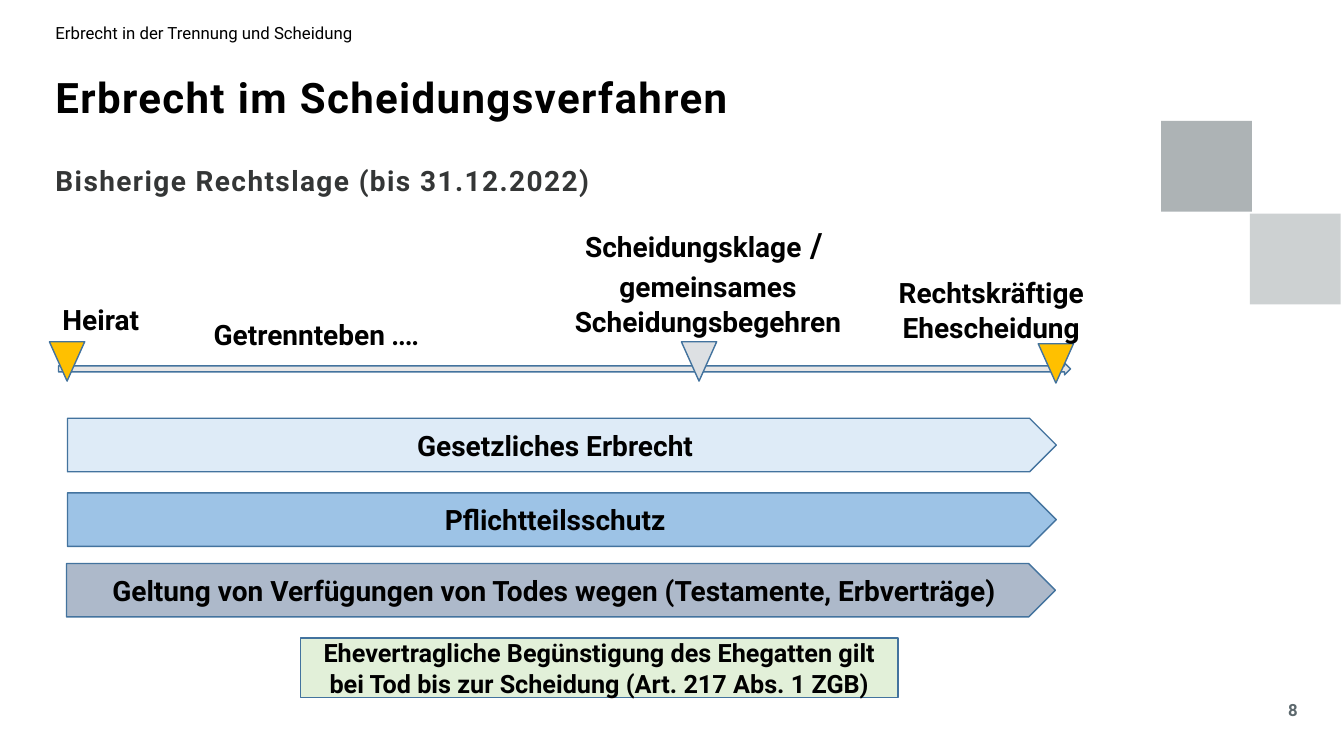
from dataclasses import dataclass

from lxml import etree
from pptx import Presentation
from pptx.dml.color import RGBColor
from pptx.enum.shapes import MSO_SHAPE
from pptx.enum.text import MSO_ANCHOR, MSO_AUTO_SIZE, PP_ALIGN
from pptx.oxml.ns import qn
from pptx.shapes.autoshape import Shape
from pptx.slide import Slide
from pptx.text.text import TextFrame
from pptx.util import Pt

RECTANGLE = MSO_SHAPE.RECTANGLE
TRIANGLE = MSO_SHAPE.ISOSCELES_TRIANGLE
PENTAGON = MSO_SHAPE.PENTAGON
RIGHT_ARROW = MSO_SHAPE.RIGHT_ARROW
LEFT, CENTER = PP_ALIGN.LEFT, PP_ALIGN.CENTER
TOP, MIDDLE = MSO_ANCHOR.TOP, MSO_ANCHOR.MIDDLE

BLACK = RGBColor(0x00, 0x00, 0x00)
CHARCOAL = RGBColor(0x34, 0x36, 0x36)
SLATE = RGBColor(0x5C, 0x68, 0x6D)
OUTLINE = RGBColor(0x43, 0x73, 0x9E)
AXIS_GREY = RGBColor(0xE7, 0xE6, 0xE6)
MARKER_GREY = RGBColor(0xDD, 0xE0, 0xE3)
AMBER = RGBColor(0xFF, 0xC0, 0x00)
PALE_BLUE = RGBColor(0xDE, 0xEB, 0xF7)
MID_BLUE = RGBColor(0x9D, 0xC3, 0xE6)
GREY_BLUE = RGBColor(0xAD, 0xB9, 0xCA)
PALE_GREEN = RGBColor(0xE2, 0xF0, 0xD9)

FONT = "Roboto"
MARGIN = 39.6


@dataclass(frozen=True)
class Box:
    left: float
    top: float
    width: float
    height: float


@dataclass(frozen=True)
class Piece:
    text: str
    size: float | None = None
    font: str | None = None


@dataclass(frozen=True)
class Style:
    size: float = 20
    color: RGBColor = BLACK
    bold: bool = True
    align: PP_ALIGN = CENTER
    line_spacing: float | Pt | None = None
    tracking: int = 0


@dataclass(frozen=True)
class Label:
    box: Box
    paragraphs: list[list[Piece]]
    style: Style = Style()
    inset: tuple[float, float, float, float] = (0, 0, 0, 0)


@dataclass(frozen=True)
class Figure:
    kind: MSO_SHAPE
    box: Box
    fill: RGBColor
    text: str = ""
    size: float = 20
    rotation: float = 0
    outlined: bool = True
    opacity: int = 100


def write_text(frame: TextFrame, paragraphs: list[list[Piece]], style: Style) -> None:
    for index, pieces in enumerate(paragraphs):
        paragraph = frame.add_paragraph() if index else frame.paragraphs[0]
        paragraph.alignment = style.align
        if style.line_spacing is not None:
            paragraph.line_spacing = style.line_spacing
        font = paragraph.font
        font.name, font.size, font.bold = FONT, Pt(style.size), style.bold
        font.color.rgb = style.color
        for piece in pieces:
            run = paragraph.add_run()
            run.text = piece.text
            if piece.size:
                run.font.size = Pt(piece.size)
            if piece.font:
                run.font.name = piece.font
            if style.tracking:
                run.font._element.set("spc", str(style.tracking))


def fill_label(shape: Shape, label: Label) -> None:
    box = label.box
    shape.left, shape.top = Pt(box.left), Pt(box.top)
    shape.width, shape.height = Pt(box.width), Pt(box.height)
    frame = shape.text_frame
    frame.word_wrap = True
    frame.auto_size = MSO_AUTO_SIZE.NONE
    frame.vertical_anchor = TOP
    (frame.margin_left, frame.margin_top,
     frame.margin_right, frame.margin_bottom) = map(Pt, label.inset)
    write_text(frame, label.paragraphs, label.style)


def add_label(slide: Slide, label: Label) -> None:
    fill_label(slide.shapes.add_textbox(0, 0, 0, 0), label)


def add_figure(slide: Slide, figure: Figure) -> None:
    box = figure.box
    shape = slide.shapes.add_shape(
        figure.kind, Pt(box.left), Pt(box.top), Pt(box.width), Pt(box.height))
    shape.shadow.inherit = False
    shape.rotation = figure.rotation
    shape.fill.solid()
    shape.fill.fore_color.rgb = figure.fill
    if figure.opacity < 100:
        color = next(shape._element.spPr.iter(qn("a:srgbClr")))
        etree.SubElement(color, qn("a:alpha")).set("val", str(figure.opacity * 1000))
    if figure.outlined:
        shape.line.color.rgb = OUTLINE
        shape.line.width = Pt(1)
    else:
        shape.line.fill.background()
    if figure.text:
        shape.text_frame.word_wrap = True
        shape.text_frame.vertical_anchor = MIDDLE
        write_text(shape.text_frame, [[Piece(figure.text)]], Style(size=figure.size))


def marker(left: float, top: float, fill: RGBColor) -> Figure:
    return Figure(TRIANGLE, Box(left, top, 25.2, 28.1), fill, rotation=180)


def period(left: float, top: float, fill: RGBColor, text: str) -> Figure:
    return Figure(PENTAGON, Box(left, top, 706.3, 38.2), fill, text)


def square(left: float, top: float, opacity: int) -> Figure:
    return Figure(RECTANGLE, Box(left, top, 64.8, 64.8), SLATE,
                  outlined=False, opacity=opacity)


TITLE = Label(Box(MARGIN, 54, 718.6, 33.1), [[Piece("Erbrecht im Scheidungsverfahren")]],
              Style(30, align=LEFT, line_spacing=Pt(33), tracking=100))

SMALL_INSET = (0, 3.6, 7.2, 3.6)

LABELS = [
    Label(Box(MARGIN, 14.4, 329, 20.2), [[Piece("Erbrecht in der Trennung und Scheidung")]],
          Style(12, bold=False, align=LEFT, line_spacing=0.9), SMALL_INSET),
    Label(Box(920.2, 498.2, 36, 20.2), [[Piece("8")]],
          Style(12, SLATE, align=LEFT, line_spacing=0.9), SMALL_INSET),
    Label(Box(MARGIN, 119.5, 726.5, 46.8), [[Piece("Bisherige Rechtslage (bis 31.12.2022)")]],
          Style(color=CHARCOAL, align=LEFT, line_spacing=0.9, tracking=100)),
    Label(Box(36.7, 216, 70.6, 24.5), [[Piece("Heirat")]]),
    Label(Box(402.5, 159.8, 206.6, 82.1),
          [[Piece("Scheidungsklage"), Piece(" / ", 24)],
           [Piece("gemeinsames"), Piece(" ", 24), Piece("Scheidungsbegehren")]]),
    Label(Box(641.5, 193, 133.2, 53.3),
          [[Piece("Rechtskräftige"), Piece(" ", 24), Piece("Ehescheidung")]]),
    Label(Box(152.6, 226.8, 203.8, 24.5),
          [[Piece("Getrennteben"), Piece(" ....", font="Lato")]], Style(align=LEFT)),
]

FIGURES = [
    square(829.4, 86.4, 50),
    square(892.8, 152.6, 30),
    Figure(RIGHT_ARROW, Box(41.8, 259.2, 722.9, 8.6), AXIS_GREY),
    marker(35.3, 244.1, AMBER),
    marker(486.7, 244.1, MARKER_GREY),
    marker(741.6, 245.5, AMBER),
    period(48.2, 298.8, PALE_BLUE, "Gesetzliches Erbrecht"),
    period(48.2, 352.1, MID_BLUE, "Pflichtteilsschutz"),
    period(47.5, 402.5, GREY_BLUE,
           "Geltung von Verfügungen von Todes wegen (Testamente, Erbverträge)"),
    Figure(RECTANGLE, Box(214.6, 455.8, 427, 42.5), PALE_GREEN,
           "Ehevertragliche Begünstigung des Ehegatten gilt "
           "bei Tod bis zur Scheidung (Art. 217 Abs. 1 ZGB)", 18),
]


def main() -> None:
    presentation = Presentation()
    presentation.slide_width, presentation.slide_height = Pt(960), Pt(540)
    slide = presentation.slides.add_slide(presentation.slide_layouts.get_by_name("Title Only"))
    fill_label(slide.shapes.title, TITLE)
    for figure in FIGURES:
        add_figure(slide, figure)
    for label in LABELS:
        add_label(slide, label)
    presentation.save("out.pptx")


if __name__ == "__main__":
    main()
